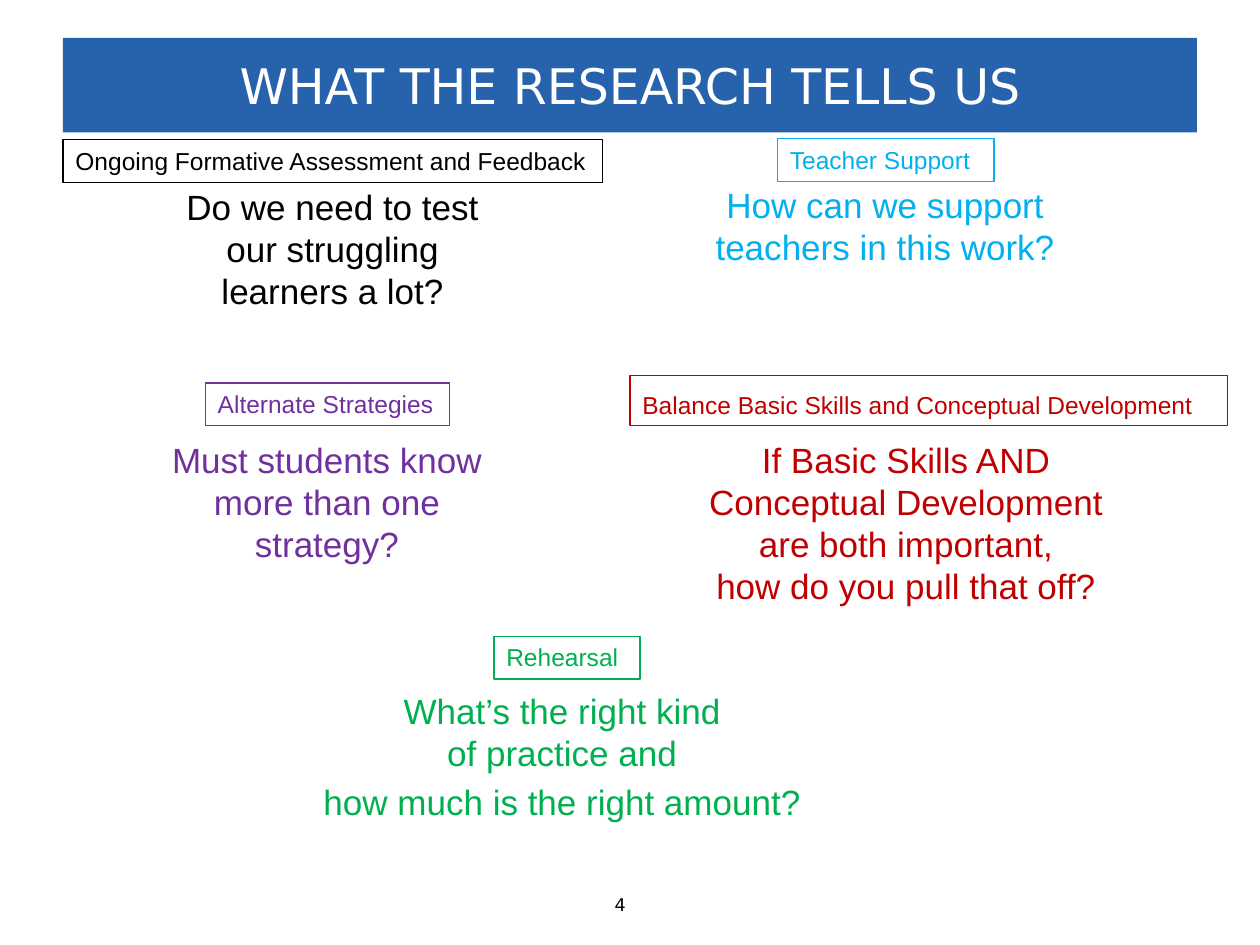
from typing import NamedTuple

from pptx import Presentation
from pptx.dml.color import RGBColor
from pptx.enum.shapes import MSO_SHAPE
from pptx.enum.text import MSO_ANCHOR, PP_ALIGN
from pptx.util import Inches, Pt

COLUMNS, ROWS = 100, 75
SLIDE_WIDTH, SLIDE_HEIGHT = Inches(10), Inches(7.5)
BLACK, WHITE, BLUE = "000000", "FFFFFF", "2762AD"


class Area(NamedTuple):
    column: float
    row: float
    columns: float
    rows: float


class Topic(NamedTuple):
    label: str
    label_area: Area
    question: list[str]
    question_area: Area
    color: str
    label_anchor: MSO_ANCHOR = MSO_ANCHOR.TOP
    last_gap: float = 0


TOPICS = [
    Topic("Ongoing Formative Assessment and Feedback", Area(5, 11.1, 42.8, 3.4),
          ["Do we need to test our struggling learners a lot?"],
          Area(13.7, 14.2, 25.4, 11.1), BLACK),
    Topic("Teacher Support", Area(61.7, 11, 17.2, 3.4),
          ["How can we support teachers in this work?"],
          Area(55.8, 14.1, 28.9, 7.7), "00B0F0"),
    Topic("Alternate Strategies", Area(16.3, 30.4, 19.4, 3.4),
          ["Must students know more than one strategy?"],
          Area(11.4, 34.3, 29.1, 11.1), "7030A0"),
    Topic("Balance Basic Skills and Conceptual Development ", Area(50, 29.8, 47.4, 4),
          ["If Basic Skills AND ", "Conceptual Development ",
           "are both important, ", "how do you pull that off? "],
          Area(55, 34.3, 34.6, 14.5), "C00000", MSO_ANCHOR.BOTTOM),
    Topic("Rehearsal", Area(39.2, 50.5, 11.6, 3.4),
          ["What’s the right kind ", "of practice and ", "how much is the right amount? "],
          Area(24.4, 54.2, 41.2, 11.8), "00B050", last_gap=4),
]


def rgb(color: str) -> RGBColor:
    return RGBColor.from_string(color)


def place(area: Area) -> tuple[int, int, int, int]:
    column, row = SLIDE_WIDTH / COLUMNS, SLIDE_HEIGHT / ROWS
    return (round(area.column * column), round(area.row * row),
            round(area.columns * column), round(area.rows * row))


def write(box, lines: list[str], size: float, color: str, font: str = "Arial",
          align: PP_ALIGN = PP_ALIGN.CENTER, anchor: MSO_ANCHOR = MSO_ANCHOR.TOP) -> None:
    frame = box.text_frame
    frame.word_wrap = True
    frame.vertical_anchor = anchor
    frame.text = "\n".join(lines)
    for paragraph in frame.paragraphs:
        paragraph.alignment = align
        paragraph.font.size = Pt(size)
        paragraph.font.name = font
        paragraph.font.color.rgb = rgb(color)


def add_rectangle(page, area: Area, fill: str = "", line: str = ""):
    box = page.shapes.add_shape(MSO_SHAPE.RECTANGLE, *place(area))
    box.shadow.inherit = False
    if fill:
        box.fill.solid()
        box.fill.fore_color.rgb = rgb(fill)
    else:
        box.fill.background()
    if line:
        box.line.color.rgb = rgb(line)
        box.line.width = Pt(0.75)
    else:
        box.line.fill.background()
    return box


def add_topic(page, topic: Topic) -> None:
    question = page.shapes.add_textbox(*place(topic.question_area))
    write(question, topic.question, 20, topic.color)
    if topic.last_gap:
        question.text_frame.paragraphs[-1].space_before = Pt(topic.last_gap)
    label = add_rectangle(page, topic.label_area, line=topic.color)
    write(label, [topic.label], 14, topic.color,
          align=PP_ALIGN.LEFT, anchor=topic.label_anchor)


def main() -> None:
    deck = Presentation()
    deck.slide_width, deck.slide_height = SLIDE_WIDTH, SLIDE_HEIGHT
    page = deck.slides.add_slide(deck.slide_layouts[6])

    number = page.shapes.add_textbox(*place(Area(47.8, 70.5, 4.4, 2.7)))
    write(number, ["4"], 10, BLACK, "DejaVu Sans", PP_ALIGN.LEFT)

    title = add_rectangle(page, Area(5, 3, 90, 7.5), fill=BLUE)
    write(title, ["WHAT THE RESEARCH TELLS US"], 28, WHITE, "DejaVu Sans",
          anchor=MSO_ANCHOR.MIDDLE)

    for topic in TOPICS:
        add_topic(page, topic)
    deck.save("out.pptx")


if __name__ == "__main__":
    main()
